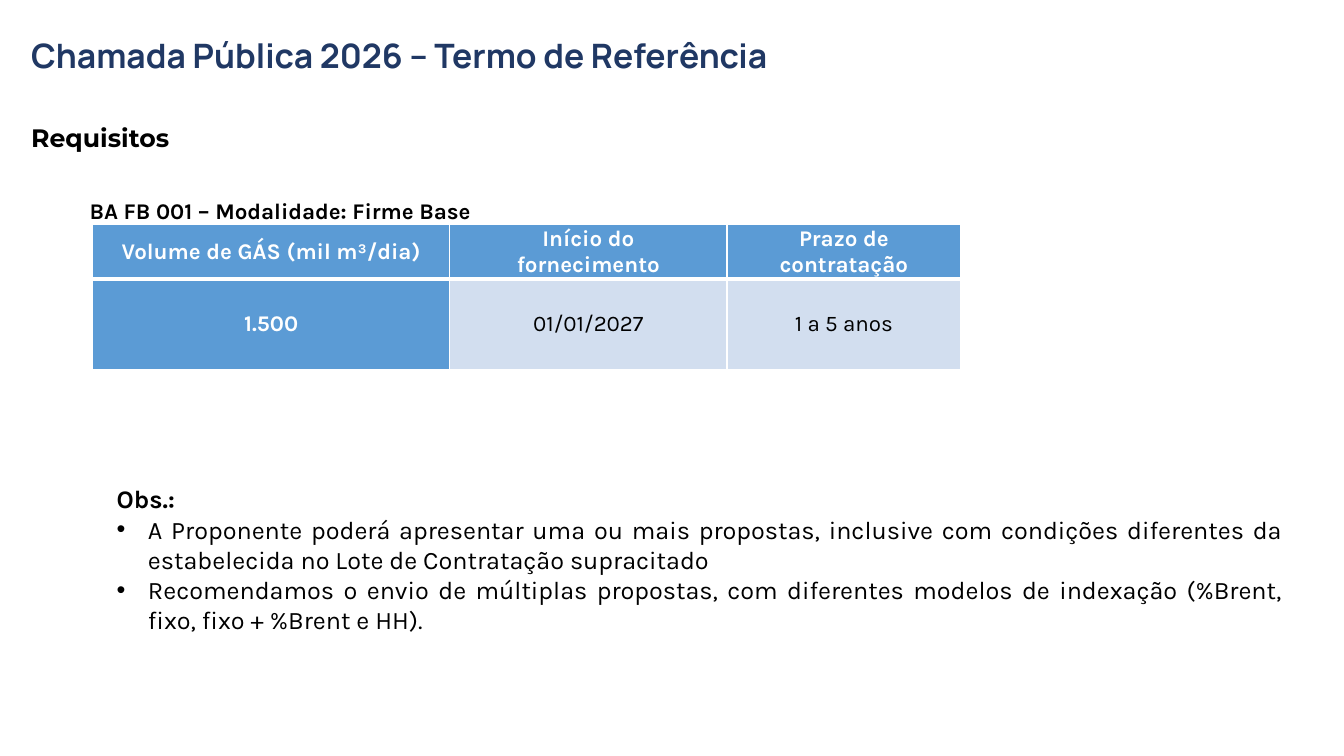
"""Build the slide with the requirements of the 2026 public call."""
from lxml.etree import SubElement
from pptx import Presentation
from pptx.dml.color import RGBColor
from pptx.enum.text import MSO_ANCHOR as Anchor, MSO_AUTO_SIZE as AutoSize, PP_ALIGN as Align
from pptx.oxml import parse_xml
from pptx.oxml.ns import nsdecls, qn
from pptx.util import Inches, Pt

WHITE, BLACK, NAVY, BLUE, PALE = "FFFFFF", "000000", "203864", "5B9BD5", "D2DEEF"


def write(paragraph, text, size=18, font="Karla", color=BLACK, bold=False, align=Align.JUSTIFY,
          spacing=None, after=None, indent=None, bullet=None):
    paragraph.alignment = align
    if spacing:
        paragraph.line_spacing = spacing
    if after:
        paragraph.space_after = Pt(after)
    if indent:
        paragraph.level = 1
        properties = paragraph._p.get_or_add_pPr()
        properties.set("marL", str(Inches(indent[0])))
        properties.set("indent", str(Inches(indent[1])))
        if bullet:
            SubElement(properties, qn("a:buFont")).set("typeface", "Arial")
            SubElement(properties, qn("a:buChar")).set("char", bullet)
    paragraph.text = text
    for run in paragraph.runs:
        run.font.size, run.font.name, run.font.bold = Pt(size), font, bold
        run.font.color.rgb = RGBColor.from_string(color)


def add_text_frame(left, top, width, height):
    frame = slide.shapes.add_textbox(*map(Inches, (left, top, width, height))).text_frame
    frame.word_wrap = True
    frame.auto_size = AutoSize.SHAPE_TO_FIT_TEXT
    return frame


presentation = Presentation()
presentation.slide_width, presentation.slide_height = Inches(13.33), Inches(7.5)
slide = presentation.slides.add_slide(presentation.slide_layouts[6])

headings = [
    ((0.21, 0.3, 8.25, 0.5), "Chamada Pública 2026 – Termo de Referência",
     dict(size=24, font="Manrope", color=NAVY, align=Align.LEFT)),
    ((0.21, 1.01, 12.62, 0.5), "Requisitos", dict(font="Montserrat", spacing=1.5)),
    ((0.79, 1.77, 6.75, 0.47), "BA FB 001 – Modalidade: Firme Base",
     dict(size=16, spacing=1.5, after=6)),
]
for box, text, style in headings:
    write(add_text_frame(*box).paragraphs[0], text, bold=True, **style)

notes = add_text_frame(0.56, 4.75, 12.26, 1.62)
write(notes.paragraphs[0], "Obs.:", bold=True, indent=(0.5, 0))
for text in (
    "A Proponente poderá apresentar uma ou mais propostas, inclusive com condições diferentes "
    "da estabelecida no Lote de Contratação supracitado",
    "Recomendamos o envio de múltiplas propostas, com diferentes modelos de indexação "
    "(%Brent, fixo, fixo + %Brent e HH).",
):
    write(notes.add_paragraph(), text, indent=(0.81, -0.31), bullet="•")

rows = [
    ["Volume de GÁS (mil m³/dia)", "Início do\vfornecimento", "Prazo de\vcontratação"],
    ["1.500", "01/01/2027", "1 a 5 anos"],
]
column_widths, row_heights = [3.54, 2.75, 2.32], [0.54, 0.9]
table = slide.shapes.add_table(
    len(rows), len(column_widths), Inches(0.92), Inches(2.23),
    Inches(sum(column_widths)), Inches(sum(row_heights))).table
for column, width in zip(table.columns, column_widths):
    column.width = Inches(width)
for row, height in zip(table.rows, row_heights):
    row.height = Inches(height)

for row_index, row in enumerate(rows):
    for column_index, text in enumerate(row):
        cell = table.cell(row_index, column_index)
        heading = row_index == 0 or column_index == 0
        cell.vertical_anchor = Anchor.MIDDLE
        cell.margin_left = cell.margin_right = Inches(0.07)
        cell.margin_top = cell.margin_bottom = 0
        cell.fill.solid()
        cell.fill.fore_color.rgb = RGBColor.from_string(BLUE if heading else PALE)
        write(cell.text_frame.paragraphs[0], text, size=16, bold=heading,
              color=WHITE if heading else BLACK, align=Align.CENTER)
        header_edge = "B" if row_index == 0 else "T"
        for position, side in enumerate("LRTB"):
            line_width = Pt(3 if side == header_edge else 1)
            cell._tc.get_or_add_tcPr().insert(position, parse_xml(
                f'<a:ln{side} {nsdecls("a")} w="{line_width}"><a:solidFill>'
                f'<a:srgbClr val="{WHITE}"/></a:solidFill></a:ln{side}>'))

presentation.save("out.pptx")
